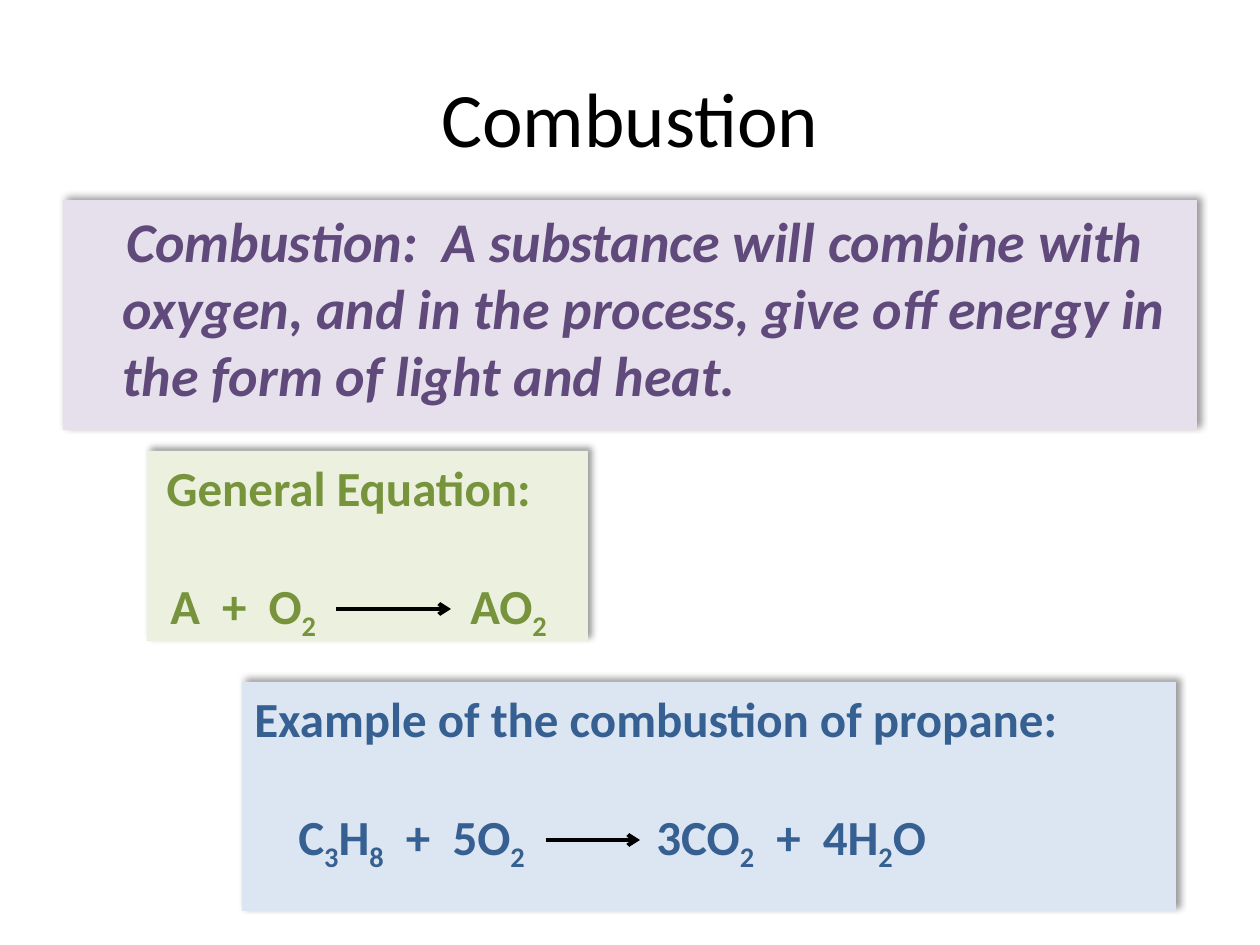
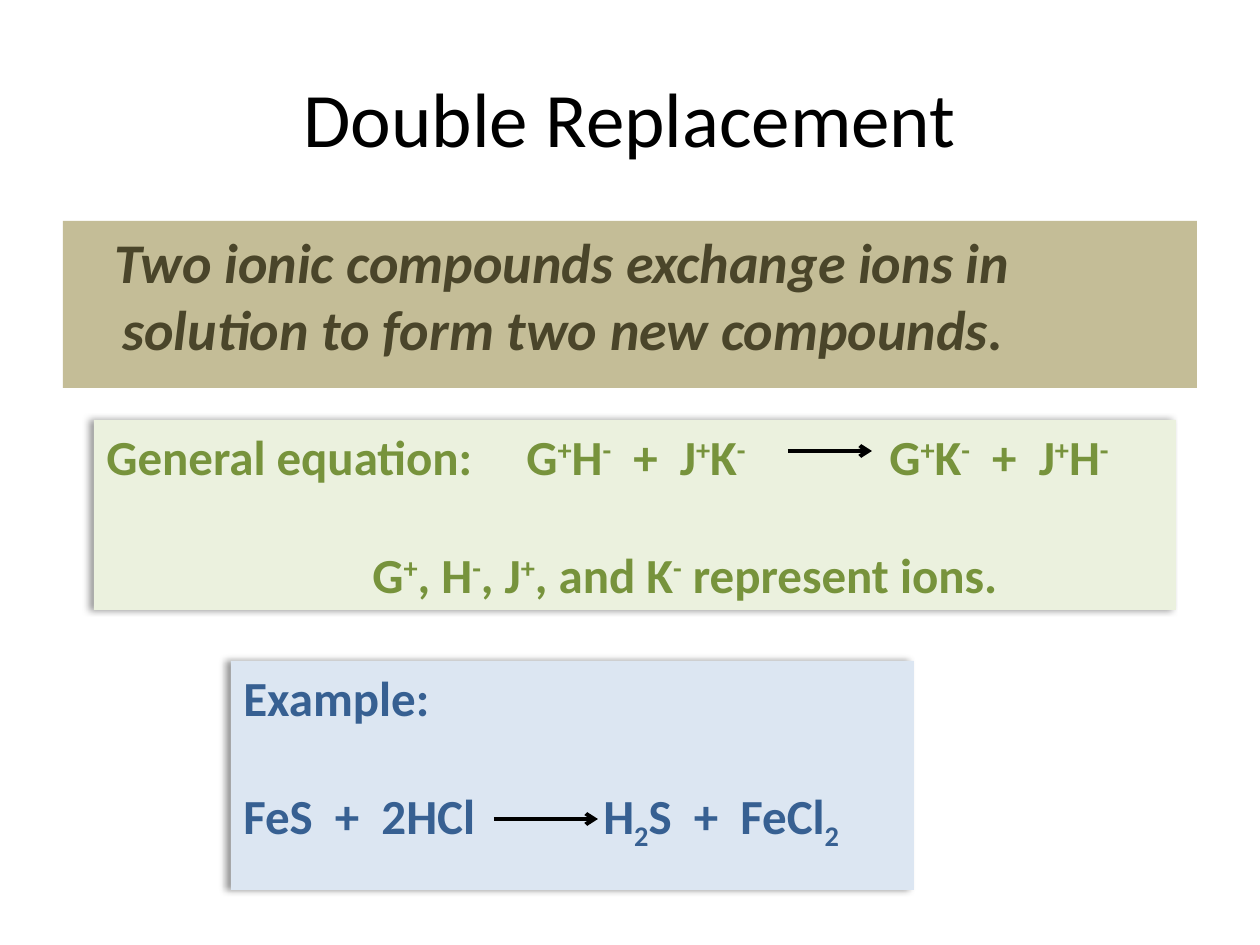
import pptx
import pptx.dml.color
import pptx.enum.shapes
import pptx.enum.text
import pptx.oxml
import pptx.oxml.ns
import pptx.util

RGB = pptx.dml.color.RGBColor
ANCHOR = pptx.enum.text.MSO_ANCHOR
BLACK = RGB(0x00, 0x00, 0x00)
LILAC = RGB(0xE6, 0xE0, 0xEC)
PURPLE = RGB(0x60, 0x4A, 0x7B)
TAN = RGB(0xC4, 0xBD, 0x97)
BROWN = RGB(0x4A, 0x45, 0x2A)
MINT = RGB(0xEB, 0xF1, 0xDE)
GREEN = RGB(0x77, 0x93, 0x3C)
SKY = RGB(0xDC, 0xE6, 0xF2)
BLUE = RGB(0x37, 0x60, 0x92)

FONT = "Calibri"
INCH = 126
SHIFT = {"_": "-25000", "^": "30000"}
UP_RIGHT, LEFT = 315, 180
LINE_GAP = 34


def px(count):
    return round(count * 914400 / INCH)


def parse(xml):
    return pptx.oxml.parse_xml(xml.replace(">", f" {pptx.oxml.ns.nsdecls('a')}>", 1))


def add_runs(para, text, size, color, bold=False, italic=False):
    """Split text at bars; a part led by _ is lowered, by ^ raised."""
    for part in text.split("|"):
        run = para.add_run()
        if part[0] in SHIFT:
            run._r.get_or_add_rPr().set("baseline", SHIFT[part[0]])
            part = part[1:]
        run.text = part
        font = run.font
        font.name, font.size = FONT, pptx.util.Pt(size)
        font.bold, font.italic = bold, italic
        font.color.rgb = color


def set_indent(para, left, first):
    props = para._p.get_or_add_pPr()
    props.set("marL", str(px(left)))
    props.set("indent", str(px(first)))


def set_tabs(para, tabs):
    """Set tab stops; an indent attribute beside them would cancel them when drawn."""
    stops = "".join(f'<a:tab pos="{px(tab)}" algn="l"/>' for tab in tabs)
    para._p.get_or_add_pPr().append(parse(f"<a:tabLst>{stops}</a:tabLst>"))


def add_title(slide, text):
    box = slide.shapes.add_textbox(px(63), px(38), px(1134), px(157))
    frame = box.text_frame
    frame.word_wrap = True
    frame.vertical_anchor = ANCHOR.MIDDLE
    para = frame.paragraphs[0]
    para.alignment = pptx.enum.text.PP_ALIGN.CENTER
    add_runs(para, text, 44, BLACK)


def add_panel(slide, box, fill, shade=None):
    """Add a filled box, with a shadow cast at the angle shade; return its text frame."""
    panel = slide.shapes.add_shape(
        pptx.enum.shapes.MSO_SHAPE.RECTANGLE, *map(px, box))
    panel.shadow.inherit = False
    panel.fill.solid()
    panel.fill.fore_color.rgb = fill
    panel.line.fill.background()
    if shade is not None:
        effects = panel._element.spPr.find(pptx.oxml.ns.qn("a:effectLst"))
        effects.append(parse(
            f'<a:outerShdw blurRad="50800" dist="38100" dir="{shade * 60000}" rotWithShape="0">'
            '<a:srgbClr val="000000"><a:alpha val="40000"/></a:srgbClr></a:outerShdw>'))
    frame = panel.text_frame
    frame.word_wrap = True
    frame.vertical_anchor = ANCHOR.TOP
    return frame


def add_meaning(slide, box, text, fill, color, first, shade=None):
    para = add_panel(slide, box, fill, shade).paragraphs[0]
    para.alignment = pptx.enum.text.PP_ALIGN.LEFT
    set_indent(para, 47, first)
    add_runs(para, text, 32, color, bold=True, italic=True)


def add_arrow(slide, left, right, y):
    line = slide.shapes.add_connector(
        pptx.enum.shapes.MSO_CONNECTOR.STRAIGHT, px(left), px(y), px(right), px(y))
    line.line.color.rgb = BLACK
    line.line.width = pptx.util.Pt(2.25)
    line.line._get_or_add_ln().append(parse('<a:tailEnd type="arrow"></a:tailEnd>'))
    line._element.spPr.append(parse("<a:effectLst></a:effectLst>"))


def add_formula(slide, box, rows, arrow, fill, color, shade):
    """Rows hold text and tab stops; arrow holds left, right and y in the box."""
    frame = add_panel(slide, box, fill, shade)
    for index, (text, tabs) in enumerate(rows):
        para = frame.add_paragraph() if index else frame.paragraphs[0]
        para.alignment = pptx.enum.text.PP_ALIGN.LEFT
        if index:
            para.space_before = pptx.util.Pt(LINE_GAP)
        if tabs:
            set_tabs(para, tabs)
        add_runs(para, text, 28, color, bold=True)
    left, right, y = arrow
    add_arrow(slide, box[0] + left, box[0] + right, box[1] + y)


def add_burning(slide):
    add_title(slide, "Combustion")
    add_meaning(
        slide, (63, 200, 1134, 230),
        "Combustion:  A substance will combine with oxygen, and in the process, "
        "give off energy in the form of light and heat.",
        LILAC, PURPLE, 4, UP_RIGHT)
    add_formula(
        slide, (147, 451, 441, 190),
        [("\tGeneral Equation:", (7,)),
         ("\tA  +  O|_2|\tAO|_2", (11, 311))],
        (189, 304, 158), MINT, GREEN, UP_RIGHT)
    add_formula(
        slide, (242, 682, 934, 229),
        [("Example of the combustion of propane:", ()),
         ("\tC|_3|H|_8|  +  5O|_2|\t3CO|_2|  +  4H|_2|O", (44, 402))],
        (304, 398, 158), SKY, BLUE, UP_RIGHT)


def add_double(slide):
    add_title(slide, "Double Replacement")
    add_meaning(
        slide, (63, 221, 1134, 167),
        "Two ionic compounds exchange ions in solution to form two new compounds.",
        TAN, BROWN, -8)
    add_formula(
        slide, (94, 420, 1082, 190),
        [("General equation:\tG|^+|H|^-|  +  J|^+|K|^-|\tG|^+|K|^-|  +  J|^+|H|^-",
          (420, 783)),
         ("\tG|^+|, H|^-|, J|^+|, and K|^-| represent ions.", (266,))],
        (694, 778, 31), MINT, GREEN, LEFT)
    add_formula(
        slide, (231, 661, 683, 229),
        [("Example:", ()),
         ("FeS  +  2HCl\tH|_2|S  +  FeCl|_2", (360,))],
        (263, 367, 158), SKY, BLUE, LEFT)


def main():
    deck = pptx.Presentation()
    deck.slide_width, deck.slide_height = px(1260), px(945)
    for build in (add_burning, add_double):
        build(deck.slides.add_slide(deck.slide_layouts[6]))
    deck.save("out.pptx")


if __name__ == "__main__":
    main()
